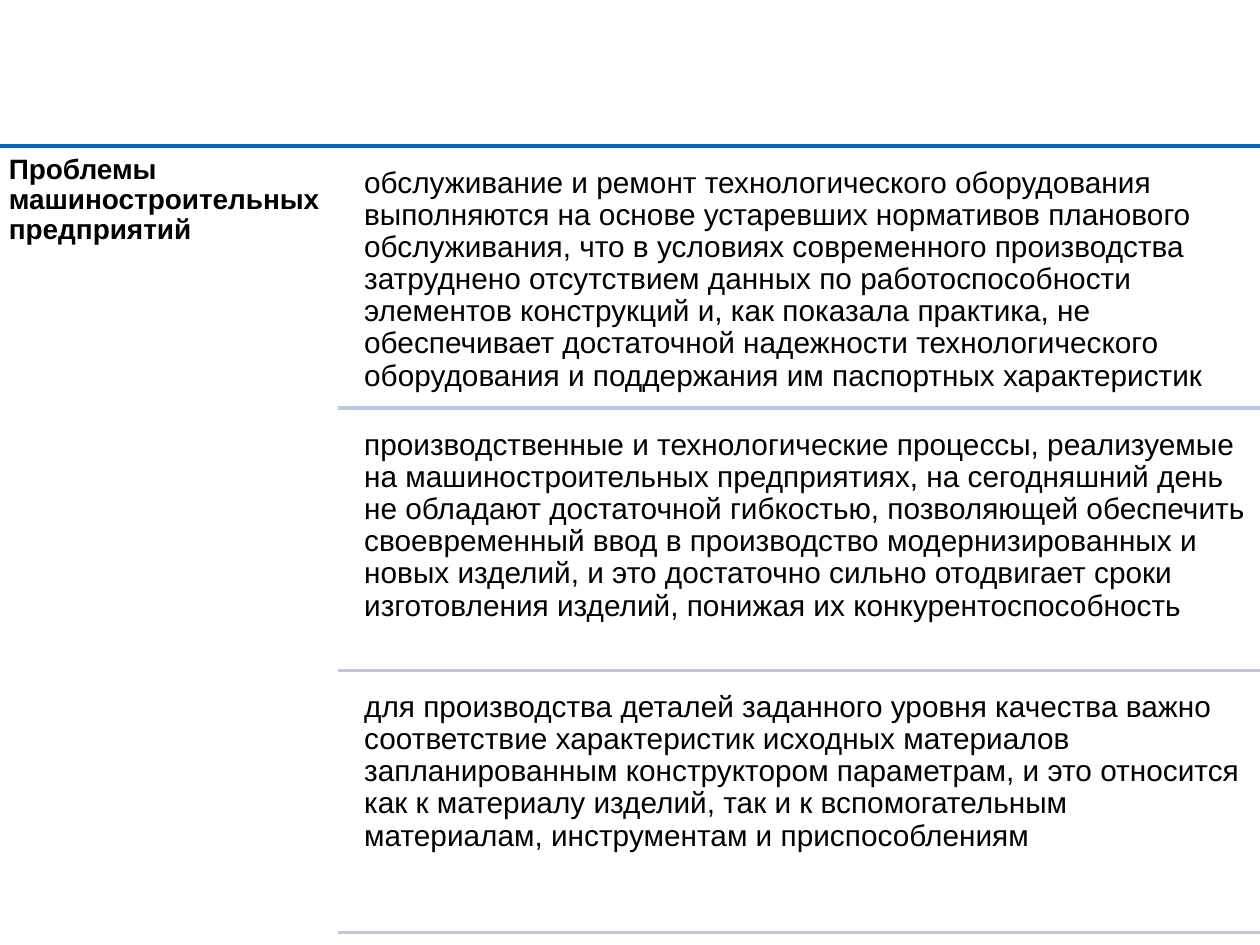
from lxml import etree
from pptx import Presentation
from pptx.dml.color import RGBColor
from pptx.enum.shapes import MSO_CONNECTOR
from pptx.enum.text import MSO_ANCHOR, MSO_AUTO_SIZE, PP_ALIGN
from pptx.oxml.ns import qn
from pptx.util import Inches, Pt

STRAIGHT = MSO_CONNECTOR.STRAIGHT
TOP = MSO_ANCHOR.TOP
NO_AUTOFIT = MSO_AUTO_SIZE.NONE
LEFT = PP_ALIGN.LEFT

COLORS = {"text": "000000", "header_rule": "0365C0", "row_rule": "BDC6E2"}
FONT = "Arial"
SLIDE_WIDTH, SLIDE_HEIGHT = 10, 7.5
HEADER_TOP = 1.16
HEADING_WIDTH = 2.68
PROBLEM_LEFT = 2.82
PROBLEM_HEIGHT = 1.98
ROW_GAP = 0.1
INSET = 0.07

HEADING = "Проблемы машиностроительных предприятий"
PROBLEMS = [
    "обслуживание и ремонт технологического оборудования выполняются на основе "
    "устаревших нормативов планового обслуживания, что в условиях современного "
    "производства затруднено отсутствием данных по работоспособности элементов "
    "конструкций и, как показала практика, не обеспечивает достаточной надежности "
    "технологического оборудования и поддержания им паспортных характеристик",
    "производственные и технологические процессы, реализуемые на "
    "машиностроительных предприятиях, на сегодняшний день не обладают достаточной "
    "гибкостью, позволяющей обеспечить своевременный ввод в производство "
    "модернизированных и новых изделий, и это достаточно сильно отодвигает сроки "
    "изготовления изделий, понижая их конкурентоспособность",
    "для производства деталей заданного уровня качества важно соответствие "
    "характеристик исходных материалов запланированным конструктором параметрам, "
    "и это относится как к материалу изделий, так и к вспомогательным материалам, "
    "инструментам и приспособлениям",
]


def add_rule(page, left, top, color):
    """Draw a horizontal line from left to the right edge of the slide."""
    rule = page.shapes.add_connector(
        STRAIGHT, Inches(left), Inches(top), Inches(SLIDE_WIDTH), Inches(top))
    rule.line.color.rgb = RGBColor.from_string(COLORS[color])
    rule.line.width = Pt(2)
    etree.SubElement(rule.element.spPr, qn("a:effectLst"))


def write_text(box, text, size, bold=False):
    frame = box.text_frame
    frame.word_wrap = True
    frame.auto_size = NO_AUTOFIT
    frame.vertical_anchor = TOP
    frame.margin_left = frame.margin_right = Inches(INSET)
    frame.margin_top = frame.margin_bottom = Inches(INSET)
    para = frame.paragraphs[0]
    para.alignment = LEFT
    para.line_spacing = 0.9
    span = para.add_run()
    span.text = text
    span.font.name = FONT
    span.font.size = Pt(size)
    span.font.bold = bold
    span.font.color.rgb = RGBColor.from_string(COLORS["text"])


deck = Presentation()
deck.slide_width = Inches(SLIDE_WIDTH)
deck.slide_height = Inches(SLIDE_HEIGHT)
page = deck.slides.add_slide(deck.slide_layouts.get_by_name("Title Only"))

add_rule(page, 0, HEADER_TOP, "header_rule")
heading = page.shapes.title
heading.left, heading.top = Inches(0), Inches(HEADER_TOP)
heading.width = Inches(HEADING_WIDTH)
heading.height = Inches(SLIDE_HEIGHT - HEADER_TOP)
write_text(heading, HEADING, 16, bold=True)

for row, problem in enumerate(PROBLEMS):
    top = HEADER_TOP + ROW_GAP + row * (PROBLEM_HEIGHT + ROW_GAP)
    box = page.shapes.add_textbox(
        Inches(PROBLEM_LEFT), Inches(top),
        Inches(SLIDE_WIDTH - PROBLEM_LEFT), Inches(PROBLEM_HEIGHT))
    write_text(box, problem, 17)
    add_rule(page, HEADING_WIDTH, top + PROBLEM_HEIGHT, "row_rule")

deck.save("out.pptx")
